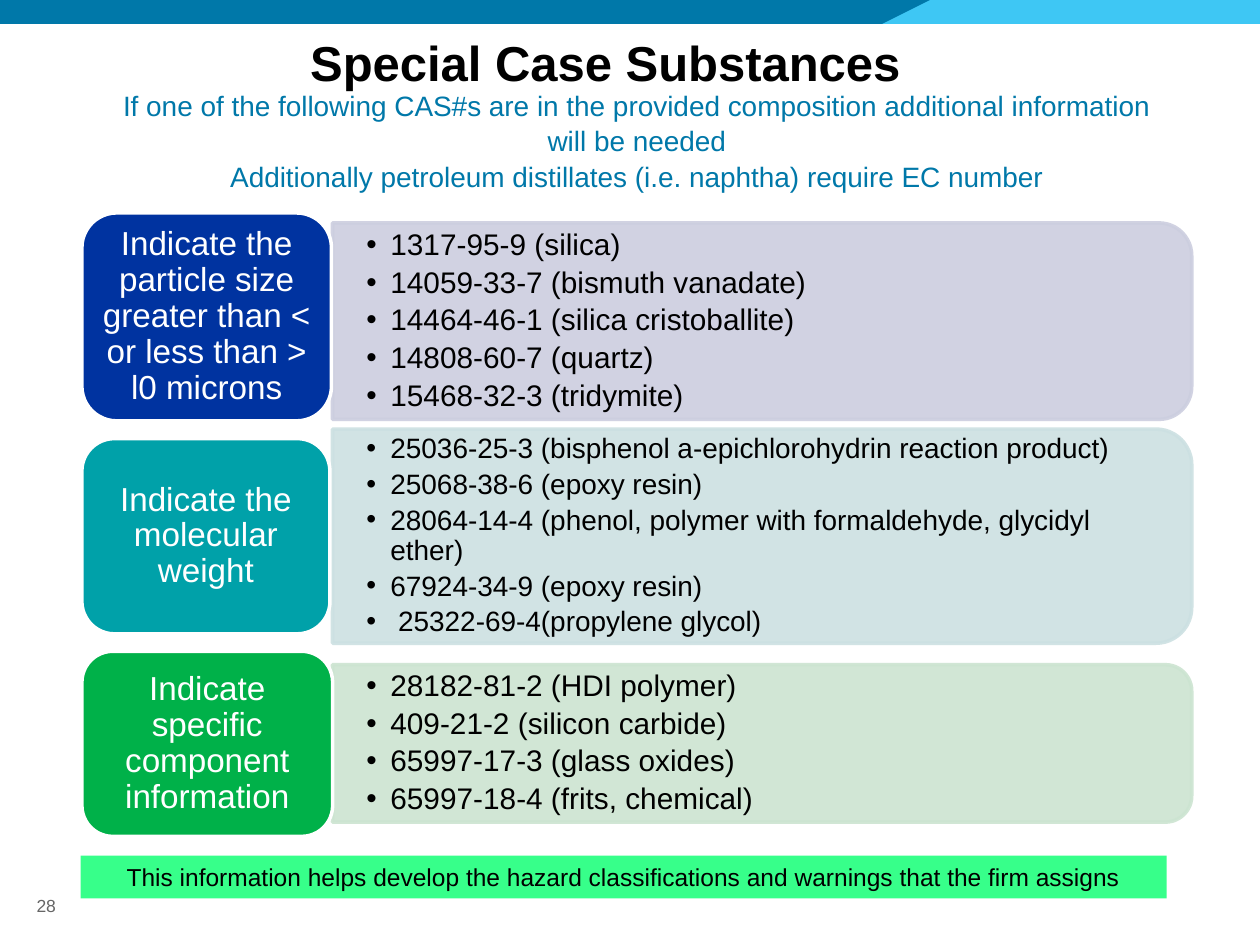
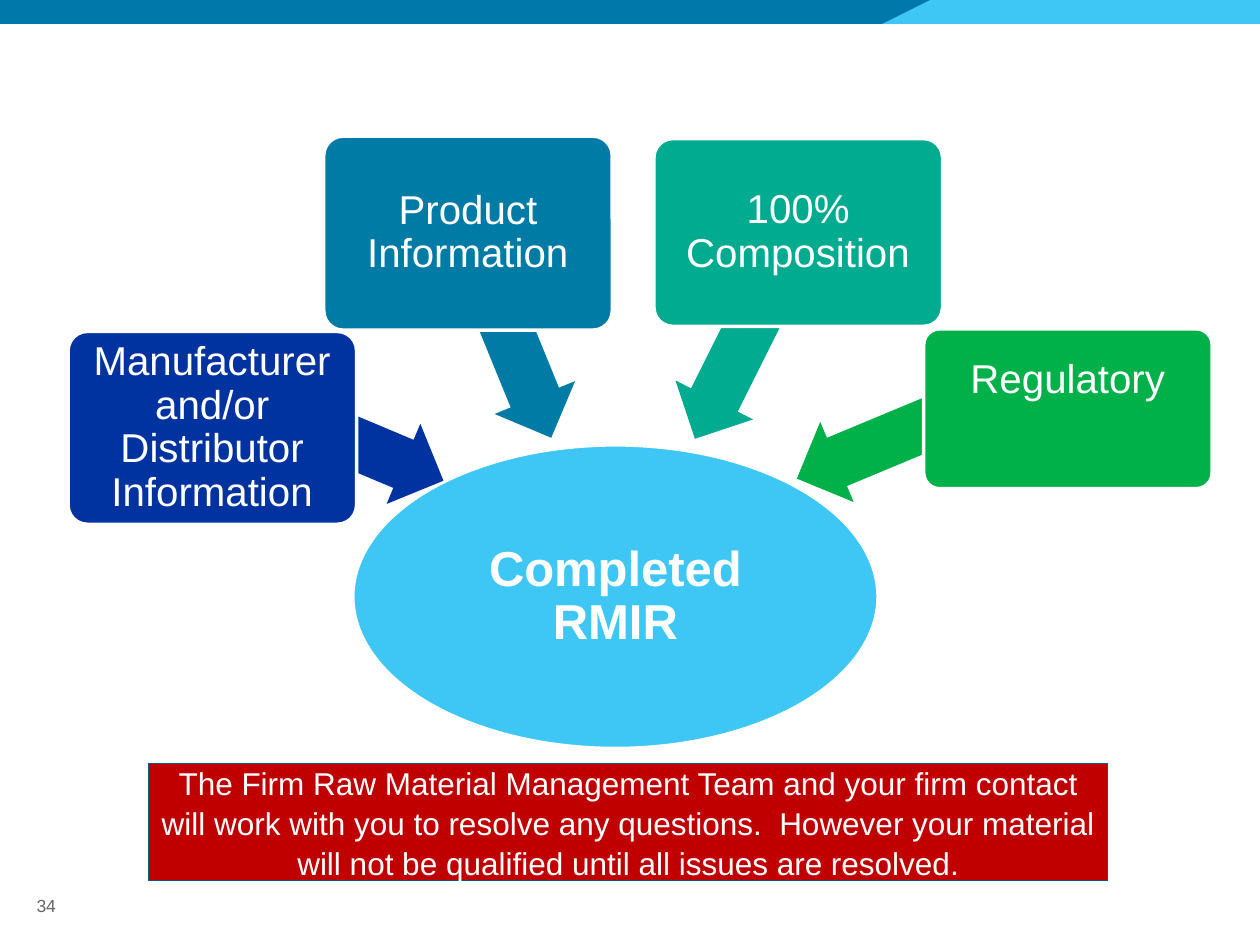
"""Build two slides on special case substances and the completed RMIR."""
from lxml import etree
from pptx import Presentation
from pptx.dml.color import RGBColor
from pptx.enum import shapes, text
from pptx.oxml import ns
from pptx.util import Pt

FONT = "Arial"
WHITE = RGBColor(0xFF, 0xFF, 0xFF)
BLACK = RGBColor(0, 0, 0)
GRAY = RGBColor(0x66, 0x66, 0x66)
BLUE = RGBColor(0x00, 0x78, 0xA9)
SKY = RGBColor(0x3E, 0xC7, 0xF4)
NAVY = RGBColor(0x00, 0x33, 0xA0)
TEAL = RGBColor(0x00, 0xA1, 0xA9)
GREEN = RGBColor(0x00, 0xB1, 0x49)
OCEAN = RGBColor(0x00, 0x7B, 0xA6)
JADE = RGBColor(0x00, 0xAB, 0x8F)
LILAC = RGBColor(0xCC, 0xCE, 0xDF)
MIST = RGBColor(0xCC, 0xE0, 0xE2)
MINT = RGBColor(0xCC, 0xE4, 0xD1)
LIME = RGBColor(0x37, 0xFF, 0x8A)
RED = RGBColor(0xC0, 0x00, 0x00)
DEEP = RGBColor(0x00, 0x5A, 0x7F)

KIND = shapes.MSO_SHAPE
CENTER = text.PP_ALIGN.CENTER
LEFT = text.PP_ALIGN.LEFT
MIDDLE = text.MSO_ANCHOR.MIDDLE
TOP = text.MSO_ANCHOR.TOP

BAND_HEIGHT = 13.7
PANEL_LEFT, PANEL_WIDTH, LIST_WIDTH = 190, 491, 486
LABEL_LEFT = 46.8
INDENT = 13.7

TITLE = "Special Case Substances"
SUBTITLE = [
    "If one of the following CAS#s are in the provided composition additional information will be needed",
    "Additionally petroleum distillates (i.e. naphtha) require EC number",
]
GROUPS = [
    dict(label="Indicate the particle size greater than < or less than > l0 microns",
         color=NAVY, tint=LILAC, label_box=(121.7, 142.6, 118.8), panel=(127.4, 112.3), size=17,
         items=["1317-95-9 (silica)", "14059-33-7 (bismuth vanadate)",
                "14464-46-1 (silica cristoballite)", "14808-60-7 (quartz)",
                "15468-32-3 (tridymite)"]),
    dict(label="Indicate the molecular weight",
         color=TEAL, tint=MIST, label_box=(250.6, 141.8, 111.6), panel=(245.2, 122.4), size=16,
         items=["25036-25-3 (bisphenol a-epichlorohydrin reaction product)",
                "25068-38-6 (epoxy resin)",
                "28064-14-4 (phenol, polymer with formaldehyde, glycidyl ether)",
                "67924-34-9 (epoxy resin)", " 25322-69-4(propylene glycol)"]),
    dict(label="Indicate specific component information",
         color=GREEN, tint=MINT, label_box=(372.2, 143.3, 105.8), panel=(379.8, 90), size=17,
         items=["28182-81-2 (HDI polymer)", "409-21-2 (silicon carbide)",
                "65997-17-3 (glass oxides)", "65997-18-4 (frits, chemical)"]),
]
HAZARD_NOTE = "This information helps develop the hazard classifications and warnings that the firm assigns"

GOAL = "Completed RMIR"
INPUTS = [
    ("Manufacturer and/or Distributor Information", NAVY,
     (38.9, 189.4, 164.9, 110.2), (146.2, 228.2, 111.6), 202.8, 3.6),
    ("Product Information", OCEAN,
     (185, 77.8, 164.9, 110.9), (228.2, 167, 126), 247.8, 3.6),
    ("100% Composition", JADE,
     (373.7, 79.2, 164.9, 107.3), (360.7, 167, 131.8), 296.6, 3.6),
    ("Regulatory", GREEN,
     (527.8, 187.9, 164.9, 91.4), (450, 221.8, 139.7), 337.4, 36),
]
ARROW_HEIGHT = 49.7
TEAM_NOTE = ("The Firm Raw Material Management Team and your firm contact will work with you to "
             "resolve any questions.  However your material will not be qualified until all "
             "issues are resolved.")


def points(values):
    """Convert numbers to point lengths."""
    return [Pt(value) for value in values]


def place(box, spot):
    """Move and size a shape."""
    box.left, box.top, box.width, box.height = points(spot)


def paint(box, fill, line=None, width=2):
    """Give a shape its fill and outline without a shadow."""
    box.shadow.inherit = False
    box.fill.solid()
    box.fill.fore_color.rgb = fill
    if line is None:
        box.line.fill.background()
    else:
        box.line.color.rgb = line
        box.line.width = Pt(width)


def add_figure(page, kind, spot, fill, line=None, width=2):
    """Add a painted preset shape."""
    box = page.shapes.add_shape(kind, *points(spot))
    paint(box, fill, line, width)
    return box


def add_bullet(para):
    """Give a paragraph a hanging round bullet."""
    props = para._p.get_or_add_pPr()
    props.set("marL", str(Pt(INDENT)))
    props.set("indent", str(-Pt(INDENT)))
    etree.SubElement(props, ns.qn("a:buFont")).set("typeface", FONT)
    etree.SubElement(props, ns.qn("a:buChar")).set("char", "•")


def write(box, lines, size, color, bold=False, align=CENTER, anchor=MIDDLE,
          margins=(7.2, 3.6, 7.2, 3.6), spacing=0.9, after=0, bullets=False):
    """Fill a shape with formatted paragraphs."""
    frame = box.text_frame
    frame.text = "\n".join(lines)
    frame.word_wrap = True
    frame.auto_size = text.MSO_AUTO_SIZE.NONE
    frame.vertical_anchor = anchor
    (frame.margin_left, frame.margin_top,
     frame.margin_right, frame.margin_bottom) = points(margins)
    for para in frame.paragraphs:
        if bullets:
            add_bullet(para)
        para.alignment = align
        para.line_spacing = spacing
        para.space_before = Pt(0)
        para.space_after = Pt(after)
        for span in para.runs:
            span.font.name = FONT
            span.font.size = Pt(size)
            span.font.bold = bold
            span.font.color.rgb = color


def add_page(deck, layout, number):
    """Add a slide with the top band and page number."""
    page = deck.slides.add_slide(deck.slide_layouts[layout])
    add_figure(page, KIND.RECTANGLE, (492.5, 0, 227.5, BAND_HEIGHT), SKY)
    builder = page.shapes.build_freeform(0, 0)
    corners = [(531.4, 0), (504, BAND_HEIGHT), (0, BAND_HEIGHT)]
    builder.add_line_segments([points(corner) for corner in corners], close=True)
    paint(builder.convert_to_shape(), BLUE)
    box = page.shapes.add_textbox(*points((20.9, 511.2, 33.1, 13.7)))
    write(box, [number], 10, GRAY, align=LEFT, anchor=TOP, margins=(0, 0, 0, 0), spacing=1)
    return page


def add_panel(page, top, height, tint):
    """Add a translucent panel rounded on its right side."""
    left = PANEL_LEFT + (PANEL_WIDTH - height) / 2
    spot = (left, top + (height - PANEL_WIDTH) / 2, height, PANEL_WIDTH)
    panel = add_figure(page, KIND.ROUND_2_SAME_RECTANGLE, spot, tint, tint)
    panel.rotation = 90
    for color in panel._element.spPr.iter(ns.qn("a:srgbClr")):
        etree.SubElement(color, ns.qn("a:alpha")).set("val", "90000")


def build_substances(deck):
    """Build the slide of substances that need more information."""
    page = add_page(deck, 4, "28")
    title, subtitle, *lists = page.placeholders
    place(title, (91.4, 15.1, 509, 51.1))
    write(title, [TITLE], 28, BLACK, bold=True, anchor=TOP, margins=(0, 2, 0, 0), spacing=1.05)
    place(subtitle, (54.7, 46.1, 618.5, 65.5))
    write(subtitle, SUBTITLE, 16, BLUE, anchor=TOP, spacing=1.05)
    for group, box in zip(GROUPS, lists):
        top, height = group["panel"]
        add_panel(page, top, height, group["tint"])
        page.shapes._spTree.append(box._element)
        place(box, (PANEL_LEFT, top, LIST_WIDTH, height))
        write(box, group["items"], group["size"], BLACK, align=LEFT,
              margins=(19.4, 0, 19.4, 0), after=3.2, bullets=True)
        label_top, *extent = group["label_box"]
        label = add_figure(page, KIND.ROUNDED_RECTANGLE, (LABEL_LEFT, label_top, *extent),
                           group["color"], WHITE)
        write(label, [group["label"]], 19, WHITE, margins=(5.8, 2.9, 5.8, 2.9))
    note = add_figure(page, KIND.RECTANGLE, (46.1, 488.9, 620.6, 24.5), LIME)
    write(note, [HAZARD_NOTE], 14, BLACK, spacing=1)


def build_completed(deck):
    """Build the slide of inputs that lead to the completed form."""
    page = add_page(deck, 6, "34")
    goal = add_figure(page, KIND.OVAL, (201.6, 254.2, 300.2, 173.5), SKY, WHITE)
    write(goal, [GOAL], 28, WHITE, bold=True, margins=(1.4, 1.4, 1.4, 1.4))
    for name, color, spot, (left, top, length), angle, bottom in INPUTS:
        arrow = add_figure(page, KIND.LEFT_ARROW, (left, top, length, ARROW_HEIGHT), color)
        arrow.adjustments[0], arrow.adjustments[1] = 0.6, 0.5
        arrow.rotation = angle
        box = add_figure(page, KIND.ROUNDED_RECTANGLE, spot, color, WHITE)
        box.adjustments[0] = 0.1
        write(box, [name], 23, WHITE, margins=(3.6, 3.6, 3.6, bottom))
    note = add_figure(page, KIND.RECTANGLE, (85, 436.3, 547.9, 67), RED, DEEP, 0.75)
    write(note, [TEAM_NOTE], 18, WHITE, spacing=1.05)


def main():
    """Create and save the deck."""
    deck = Presentation()
    deck.slide_width, deck.slide_height = Pt(720), Pt(540)
    build_substances(deck)
    build_completed(deck)
    deck.save("out.pptx")


if __name__ == "__main__":
    main()
